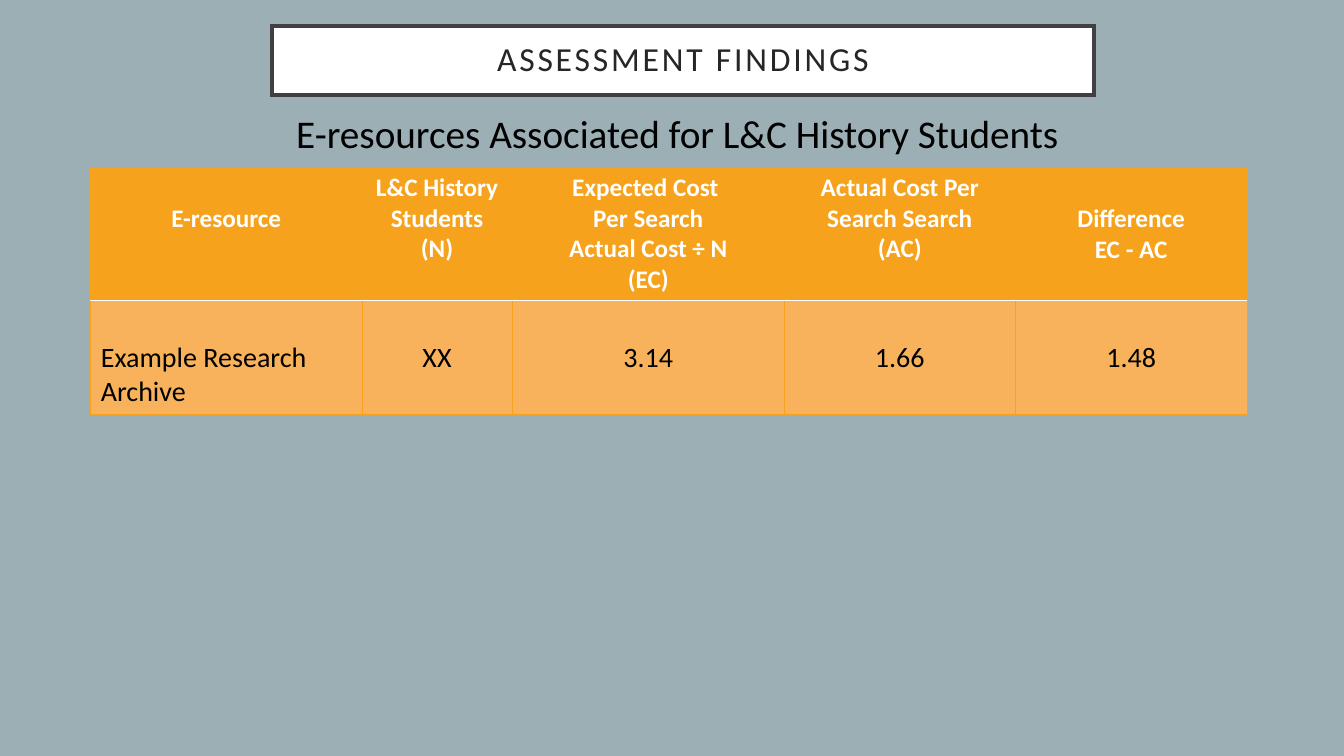
from lxml import etree
from pptx import Presentation
from pptx.dml.color import RGBColor
from pptx.enum.text import MSO_ANCHOR, PP_ALIGN
from pptx.oxml.ns import qn
from pptx.util import Inches, Pt

FONT = "Calibri"
BACKGROUND = RGBColor(0x9B, 0xAF, 0xB5)
WHITE = RGBColor(0xFF, 0xFF, 0xFF)
BLACK = RGBColor(0x00, 0x00, 0x00)
TITLE_TEXT = RGBColor(0x26, 0x26, 0x26)
TITLE_BORDER = RGBColor(0x40, 0x40, 0x40)
ORANGE = RGBColor(0xF6, 0xA2, 0x1D)
LIGHT_ORANGE = RGBColor(0xF9, 0xB2, 0x5C)

COLUMN_WIDTHS = [2.69, 1.49, 2.7, 2.29, 2.3]
ROW_HEIGHTS = [1.32, 1.13]
HEADERS = [
    "E-resource",
    "L&C History Students\n(N)",
    "Expected Cost \nPer Search\nActual Cost ÷ N\n(EC)",
    "Actual Cost Per Search Search\n(AC)",
    "Difference\nEC - AC",
]
FINDINGS = ["Example Research Archive", "XX", "3.14", "1.66", "1.48"]
ONE_LINE_HEADERS = (0, 4)  # columns whose heading starts one line lower


def format_text(frame, size, color, align, bold=False):
    for paragraph in frame.paragraphs:
        paragraph.alignment = align
        for run in paragraph.runs:
            run.font.name = FONT
            run.font.size = Pt(size)
            run.font.bold = bold
            run.font.color.rgb = color


def set_borders(cell, top, bottom):
    """Draw the cell's four sides; top and bottom are (colour, points)."""
    thin = (ORANGE, 0.5)
    sides = [("a:lnL", thin), ("a:lnR", thin), ("a:lnT", top), ("a:lnB", bottom)]
    properties = cell._tc.get_or_add_tcPr()
    for index, (tag, (color, width)) in enumerate(sides):
        line = etree.Element(qn(tag), w=str(Pt(width)))
        fill = etree.SubElement(line, qn("a:solidFill"))
        etree.SubElement(fill, qn("a:srgbClr"), val=str(color))
        properties.insert(index, line)


def add_title(slide, left, top, width, height):
    title = slide.shapes.title
    title.left, title.top = Inches(left), Inches(top)
    title.width, title.height = Inches(width), Inches(height)
    title.fill.solid()
    title.fill.fore_color.rgb = WHITE
    title.line.color.rgb = TITLE_BORDER
    title.line.width = Pt(3)
    etree.SubElement(title.line._get_or_add_ln(), qn("a:miter"), lim="800000")
    frame = title.text_frame
    frame.text = "ASSESSMENT FINDINGS"
    frame.vertical_anchor = MSO_ANCHOR.MIDDLE
    frame.margin_left = frame.margin_right = Inches(0.3)
    frame.paragraphs[0].line_spacing = 0.9
    format_text(frame, 24, TITLE_TEXT, PP_ALIGN.CENTER)
    frame.paragraphs[0].runs[0].font._element.set("spc", "200")


def add_subtitle(slide, left, top, width, height):
    subtitle = slide.shapes.add_textbox(
        Inches(left), Inches(top), Inches(width), Inches(height))
    frame = subtitle.text_frame
    frame.word_wrap = True
    frame.text = "E-resources Associated for L&C History Students"
    format_text(frame, 28, BLACK, PP_ALIGN.LEFT)


def add_cost_table(slide, left, top):
    table = slide.shapes.add_table(
        len(ROW_HEIGHTS), len(COLUMN_WIDTHS), Inches(left), Inches(top),
        Inches(sum(COLUMN_WIDTHS)), Inches(sum(ROW_HEIGHTS))).table
    table.horz_banding = False
    for column, width in zip(table.columns, COLUMN_WIDTHS):
        column.width = Inches(width)
    for row, height in zip(table.rows, ROW_HEIGHTS):
        row.height = Inches(height)

    edge, divider = (ORANGE, 0.5), (WHITE, 1.5)
    for index, (header, finding) in enumerate(zip(HEADERS, FINDINGS)):
        heading, value = table.cell(0, index), table.cell(1, index)
        for cell, text, fill in ((heading, header, ORANGE),
                                 (value, finding, LIGHT_ORANGE)):
            cell.text_frame.text = text
            cell.fill.solid()
            cell.fill.fore_color.rgb = fill
        if index in ONE_LINE_HEADERS:
            heading.margin_top = Inches(0.36)
        value.margin_top = Inches(0.4)
        format_text(heading.text_frame, 18, WHITE, PP_ALIGN.CENTER, bold=True)
        format_text(value.text_frame, 20, BLACK,
                    PP_ALIGN.CENTER if index else PP_ALIGN.LEFT)
        set_borders(heading, edge, divider)
        set_borders(value, divider, edge)


def main():
    deck = Presentation()
    deck.slide_width, deck.slide_height = Inches(13.33), Inches(7.5)
    slide = deck.slides.add_slide(deck.slide_layouts[5])
    slide.background.fill.solid()
    slide.background.fill.fore_color.rgb = BACKGROUND
    add_title(slide, 2.7, 0.26, 8.15, 0.68)
    add_cost_table(slide, 0.9, 1.66)
    add_subtitle(slide, 2.84, 1.04, 8.84, 0.57)
    deck.save("out.pptx")


if __name__ == "__main__":
    main()
